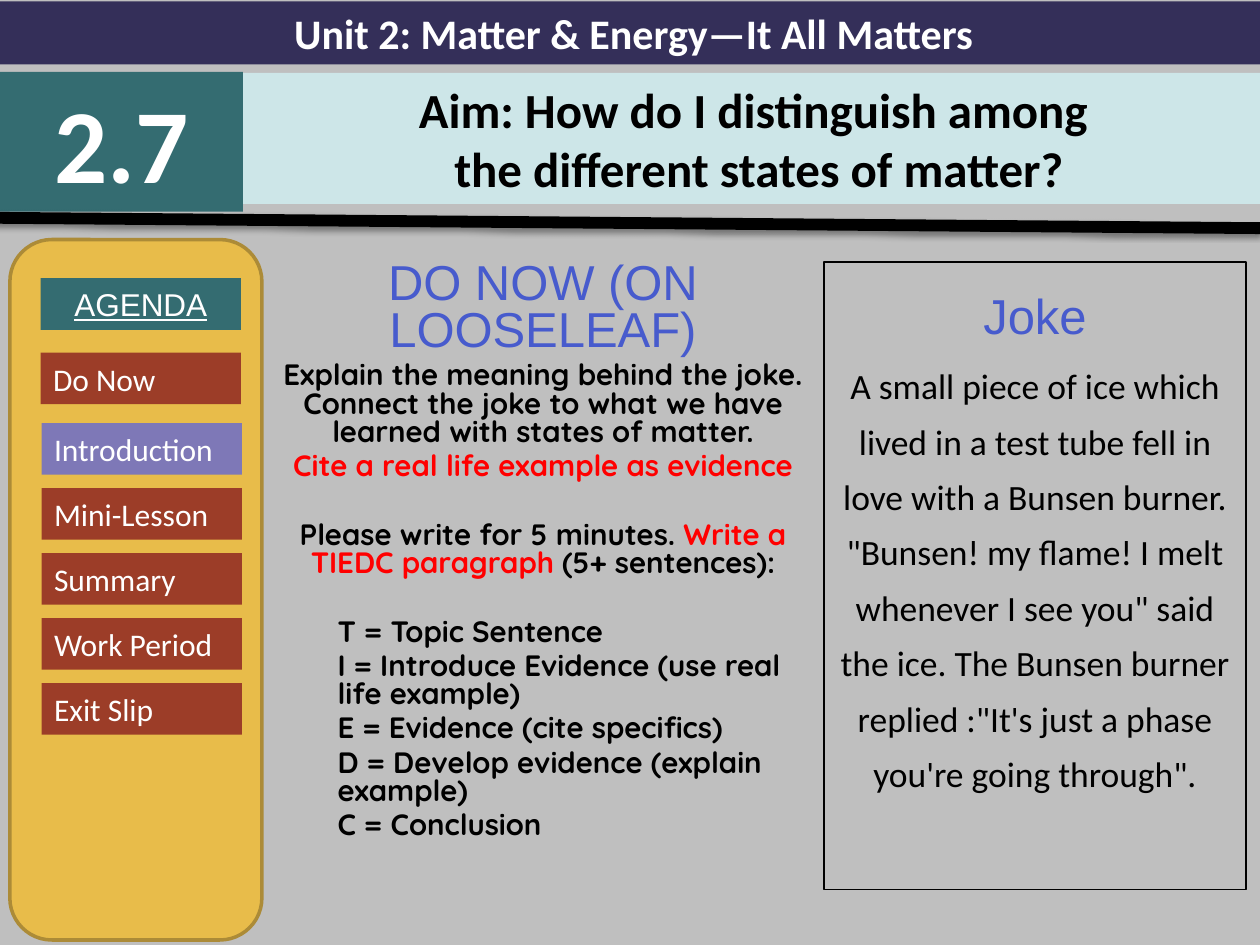
from lxml import etree
from pptx import Presentation
from pptx.dml.color import RGBColor
from pptx.enum.shapes import MSO_CONNECTOR, MSO_SHAPE
from pptx.enum.text import MSO_ANCHOR, MSO_AUTO_SIZE, PP_ALIGN
from pptx.oxml import parse_xml
from pptx.oxml.ns import nsdecls
from pptx.util import Cm, Pt

RECTANGLE = MSO_SHAPE.RECTANGLE
ROUNDED = MSO_SHAPE.ROUNDED_RECTANGLE
STRAIGHT = MSO_CONNECTOR.STRAIGHT
LEFT, CENTER = PP_ALIGN.LEFT, PP_ALIGN.CENTER
TOP, MIDDLE = MSO_ANCHOR.TOP, MSO_ANCHOR.MIDDLE
NO_AUTOFIT = MSO_AUTO_SIZE.NONE

BLACK, WHITE, RED = "000000", "FFFFFF", "FF0000"
BLUE, TEAL, RUST = "475BCD", "346C71", "9C3D28"
HEADING_FONT, BODY_FONT, TASK_FONT = "Arial", "Calibri", "Quicksand"


def rgb(value):
    return RGBColor.from_string(value)


class LessonSlide:
    def __init__(self, presentation, background):
        self.slide = presentation.slides.add_slide(presentation.slide_layouts[0])
        self.slide.background.fill.solid()
        self.slide.background.fill.fore_color.rgb = rgb(background)

    def format_runs(self, paragraph, size, font=BODY_FONT, color=WHITE, bold=False, underline=None):
        for run in paragraph.runs:
            run.font.size = Pt(size)
            run.font.name = font
            run.font.bold = bold
            run.font.underline = underline
            run.font.color.rgb = rgb(color)

    def place(self, shape, left, top, width, height):
        shape.left, shape.top = Cm(left), Cm(top)
        shape.width, shape.height = Cm(width), Cm(height)

    def prepare_frame(self, shape, anchor):
        frame = shape.text_frame
        frame.word_wrap = True
        frame.auto_size = NO_AUTOFIT
        frame.vertical_anchor = anchor
        return frame

    def box(self, bounds, fill=None, line=None, line_width=1, kind=RECTANGLE):
        shape = self.slide.shapes.add_shape(kind, *[Cm(value) for value in bounds])
        shape.shadow.inherit = False
        if fill:
            shape.fill.solid()
            shape.fill.fore_color.rgb = rgb(fill)
        else:
            shape.fill.background()
        if line:
            shape.line.color.rgb = rgb(line)
            shape.line.width = Pt(line_width)
        else:
            shape.line.fill.background()
        return shape

    def label(self, bounds, text, fill, size, align=CENTER, **style):
        frame = self.prepare_frame(self.box(bounds, fill), MIDDLE)
        frame.text = text
        frame.paragraphs[0].alignment = align
        self.format_runs(frame.paragraphs[0], size, **style)

    def title(self, bounds, text, fill, size):
        shape = self.slide.shapes.title
        self.place(shape, *bounds)
        shape.fill.solid()
        shape.fill.fore_color.rgb = rgb(fill)
        frame = self.prepare_frame(shape, MIDDLE)
        frame.text = text
        for paragraph in frame.paragraphs:
            paragraph.alignment = CENTER
            self.format_runs(paragraph, size, color=BLACK, bold=True)

    def task(self, bounds, heading, instructions, steps):
        shape = self.slide.placeholders[1]
        self.place(shape, *bounds)
        frame = self.prepare_frame(shape, TOP)
        frame.text = heading
        self.format_runs(frame.paragraphs[0], 28, HEADING_FONT, BLUE)
        for parts, gap in instructions:
            paragraph = frame.add_paragraph()
            paragraph.space_before = Pt(gap)
            for text, color in parts:
                run = paragraph.add_run()
                run.text = text
            self.format_runs(paragraph, 16.8, TASK_FONT, BLACK, True)
            for run, (text, color) in zip(paragraph.runs, parts):
                run.font.color.rgb = rgb(color)
        for index, step in enumerate(steps):
            paragraph = frame.add_paragraph()
            paragraph.text = step
            paragraph.level = 1
            paragraph.space_before = Pt(3.4 if index else 23)
            self.format_runs(paragraph, 16.8, TASK_FONT, BLACK, True)
        for paragraph in frame.paragraphs:
            paragraph.line_spacing = 0.8
            paragraph.alignment = LEFT if paragraph.level else CENTER

    def story(self, bounds, heading, text):
        frame = self.prepare_frame(self.box(bounds, line=BLACK, line_width=0.75), TOP)
        frame.text = f"{heading}\n{text}"
        styles = [(28, HEADING_FONT, BLUE), (20.3, BODY_FONT, BLACK)]
        for paragraph, (size, font, color) in zip(frame.paragraphs, styles):
            paragraph.alignment = CENTER
            paragraph.line_spacing = 1.3
            paragraph.space_before = Pt(size * 0.2)
            self.format_runs(paragraph, size, font, color)

    def divider(self, ends, color, width):
        connector = self.slide.shapes.add_connector(STRAIGHT, *[Cm(value) for value in ends])
        connector.line.color.rgb = rgb(color)
        connector.line.width = Pt(width)
        effects = parse_xml(f"<a:effectLst {nsdecls('a')}/>")
        namespace = effects.nsmap["a"]
        shadow = etree.SubElement(
            effects, f"{{{namespace}}}outerShdw", blurRad=str(Pt(3.1)),
            dist=str(Pt(1.6)), dir="5400000", rotWithShape="0")
        shade = etree.SubElement(shadow, f"{{{namespace}}}srgbClr", val=color)
        etree.SubElement(shade, f"{{{namespace}}}alpha", val="38000")
        connector._element.spPr.append(effects)


def main():
    presentation = Presentation()
    presentation.slide_width, presentation.slide_height = Cm(25.4), Cm(19.05)
    lesson = LessonSlide(presentation, "BFBFBF")

    lesson.title((4.9, 1.47, 20.57, 2.64),
                 "Aim: How do I distinguish among\n the different states of matter?", "CDE6E8", 28)
    lesson.task(
        (5.28, 5.18, 11.33, 13.87),
        "DO NOW (ON LOOSELEAF)",
        [
            ([("Explain the meaning behind the joke. Connect the joke to what we have "
               "learned with states of matter.", BLACK)], 3.4),
            ([("Cite a real life example as evidence", RED)], 3.4),
            ([("Please write for 5 minutes. ", BLACK), ("Write a TIEDC paragraph ", RED),
              ("(5+ sentences):", BLACK)], 23),
        ],
        [
            "T = Topic Sentence",
            "I = Introduce Evidence (use real life example)",
            "E = Evidence (cite specifics)",
            "D = Develop evidence (explain example)",
            "C = Conclusion",
        ],
    )
    lesson.label((0, 0.03, 25.55, 1.27), "Unit 2: Matter & Energy—It All Matters",
                 "342F59", 24, bold=True)
    lesson.label((0, 1.45, 4.9, 2.82), "2.7", TEAL, 60, bold=True)
    lesson.divider((-0.13, 4.39, 25.4, 4.6), BLACK, 6.75)

    lesson.box((0.2, 4.83, 5.08, 14.12), "E8BC4A", "AC8B37", 2, ROUNDED)
    lesson.label((0.82, 5.61, 4.04, 1.04), "AGENDA", TEAL, 18,
                 font=HEADING_FONT, underline=True)
    lesson.label((0.82, 7.11, 4.04, 1.04), "Do Now", RUST, 18, LEFT)
    stages = ["Introduction", "Mini-Lesson", "Summary", "Work Period", "Exit Slip"]
    for index, stage in enumerate(stages):
        fill = "7E78B7" if stage == "Introduction" else RUST
        lesson.label((0.84, 8.53 + 1.31 * index, 4.04, 1.04), stage, fill, 18, LEFT)

    lesson.story(
        (16.61, 5.28, 8.51, 12.65),
        "Joke",
        "A small piece of ice which lived in a test tube fell in love with a Bunsen burner. "
        "\"Bunsen! my flame! I melt whenever I see you\" said the ice. The Bunsen burner "
        "replied :\"It's just a phase you're going through\".",
    )
    presentation.save("out.pptx")


if __name__ == "__main__":
    main()
